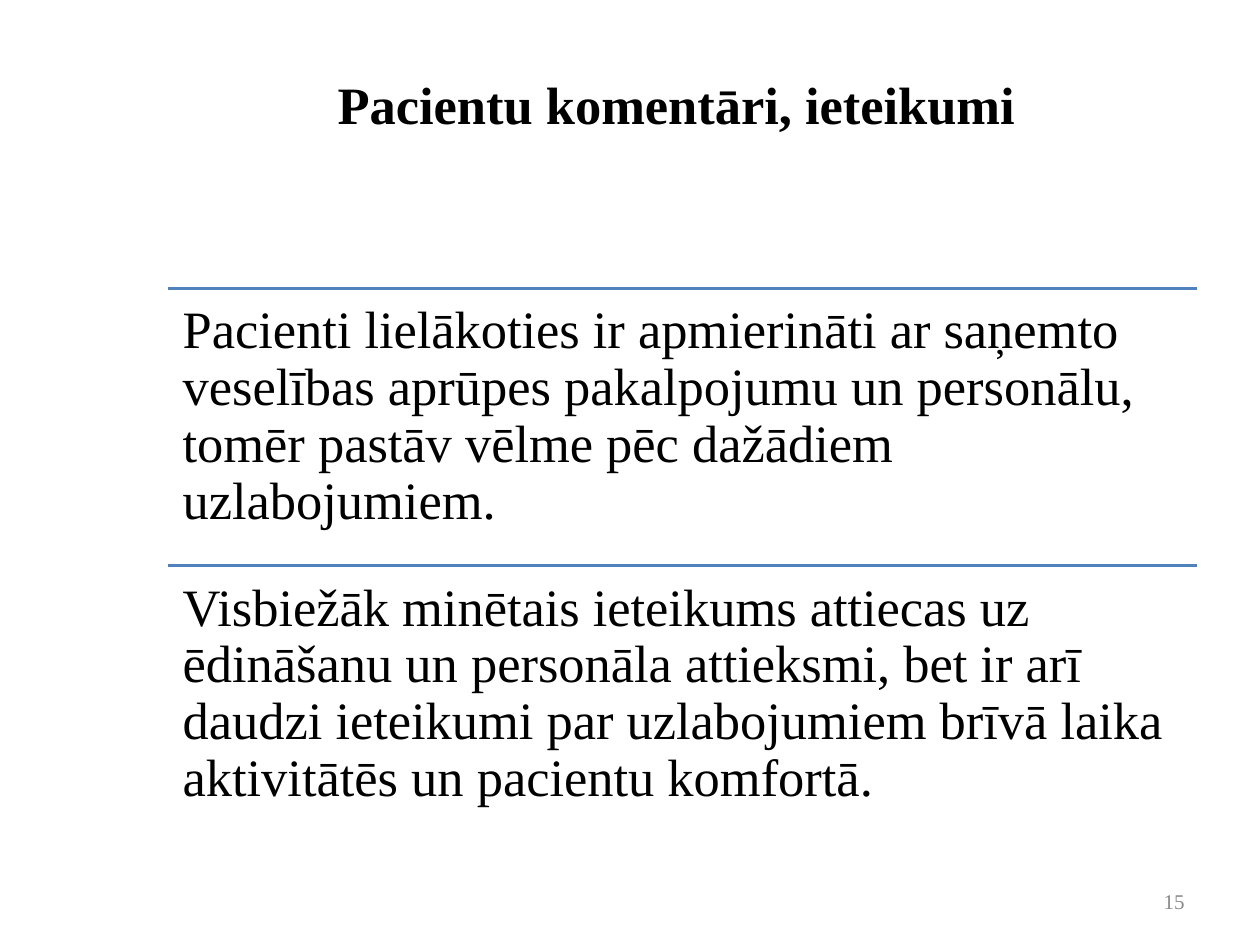
import dataclasses

import pptx
import pptx.dml.color
import pptx.enum.shapes
import pptx.enum.text
import pptx.oxml.ns
import pptx.util
from lxml import etree

ALIGN = pptx.enum.text.PP_ALIGN
ANCHOR = pptx.enum.text.MSO_ANCHOR

WIDTH, HEIGHT = 10, 7.5
COMMENTS = [
    "Pacienti lielākoties ir apmierināti ar saņemto veselības aprūpes "
    "pakalpojumu un personālu, tomēr pastāv vēlme pēc dažādiem uzlabojumiem.",
    "Visbiežāk minētais ieteikums attiecas uz ēdināšanu un personāla attieksmi, "
    "bet ir arī daudzi ieteikumi par uzlabojumiem brīvā laika aktivitātēs "
    "un pacientu komfortā.",
]


@dataclasses.dataclass(frozen=True)
class Theme:
    font: str = "Times New Roman"
    ink: str = "000000"
    muted: str = "898989"
    rule: str = "4F81BD"
    main_size: int = 30
    number_size: int = 12
    rule_width: int = 2


def rgb(value):
    return pptx.dml.color.RGBColor.from_string(value)


def write(frame, text, *, font, size, color, bold=False, align=ALIGN.LEFT,
          anchor=ANCHOR.TOP, inset=(0.1, 0.05), line_spacing=1.0):
    """Fill a text frame with one paragraph; inset is (sides, top and bottom)."""
    frame.word_wrap = True
    frame.auto_size = pptx.enum.text.MSO_AUTO_SIZE.NONE
    frame.vertical_anchor = anchor
    frame.margin_left = frame.margin_right = pptx.util.Inches(inset[0])
    frame.margin_top = frame.margin_bottom = pptx.util.Inches(inset[1])
    paragraph = frame.paragraphs[0]
    paragraph.alignment = align
    paragraph.line_spacing = line_spacing
    run = paragraph.add_run()
    run.text = text
    run.font.name = font
    run.font.size = pptx.util.Pt(size)
    run.font.bold = bold
    run.font.color.rgb = rgb(color)


class SlideBuilder:
    """Places elements by inches on the slide's 10 by 7.5 grid of unit cells."""

    def __init__(self, deck, theme):
        self.theme = theme
        self.cell_width = deck.slide_width / WIDTH
        self.cell_height = deck.slide_height / HEIGHT
        self.slide = deck.slides.add_slide(deck.slide_layouts[5])

    def box(self, left, top, width, height):
        return (round(left * self.cell_width), round(top * self.cell_height),
                round(width * self.cell_width), round(height * self.cell_height))

    def title(self, text, *area):
        heading = self.slide.shapes.title
        heading.left, heading.top, heading.width, heading.height = self.box(*area)
        write(heading.text_frame, text, font=self.theme.font,
              size=self.theme.main_size, color=self.theme.ink, bold=True,
              align=ALIGN.CENTER, anchor=ANCHOR.MIDDLE)

    def text(self, text, *area, **style):
        holder = self.slide.shapes.add_textbox(*self.box(*area))
        write(holder.text_frame, text, font=self.theme.font, **style)

    def rule(self, left, top, width):
        x, y, length, _ = self.box(left, top, width, 0)
        line = self.slide.shapes.add_connector(
            pptx.enum.shapes.MSO_CONNECTOR.STRAIGHT, x, y, x + length, y)
        line.line.color.rgb = rgb(self.theme.rule)
        line.line.width = pptx.util.Pt(self.theme.rule_width)
        etree.SubElement(line._element.spPr, pptx.oxml.ns.qn("a:effectLst"))

    def comment(self, text, left, top, width, height):
        self.rule(left, top, width)
        self.text(text, left, top, width, height, size=self.theme.main_size,
                  color=self.theme.ink, inset=(0.12, 0.12), line_spacing=0.9)

    def page_number(self, number, *area):
        self.text(str(number), *area, size=self.theme.number_size,
                  color=self.theme.muted, align=ALIGN.RIGHT, anchor=ANCHOR.MIDDLE)


def main():
    deck = pptx.Presentation()
    deck.slide_width = pptx.util.Inches(WIDTH)
    deck.slide_height = pptx.util.Inches(HEIGHT)

    builder = SlideBuilder(deck, Theme())
    builder.title("Pacientu komentāri, ieteikumi", 1.43, 0.41, 7.88, 0.82)
    builder.page_number(15, 7.17, 6.95, 2.33, 0.4)

    first_top, row_height = 2.29, 2.2
    for row, comment in enumerate(COMMENTS):
        builder.comment(comment, 1.33, first_top + row * row_height, 8.17, row_height)

    deck.save("out.pptx")


if __name__ == "__main__":
    main()
